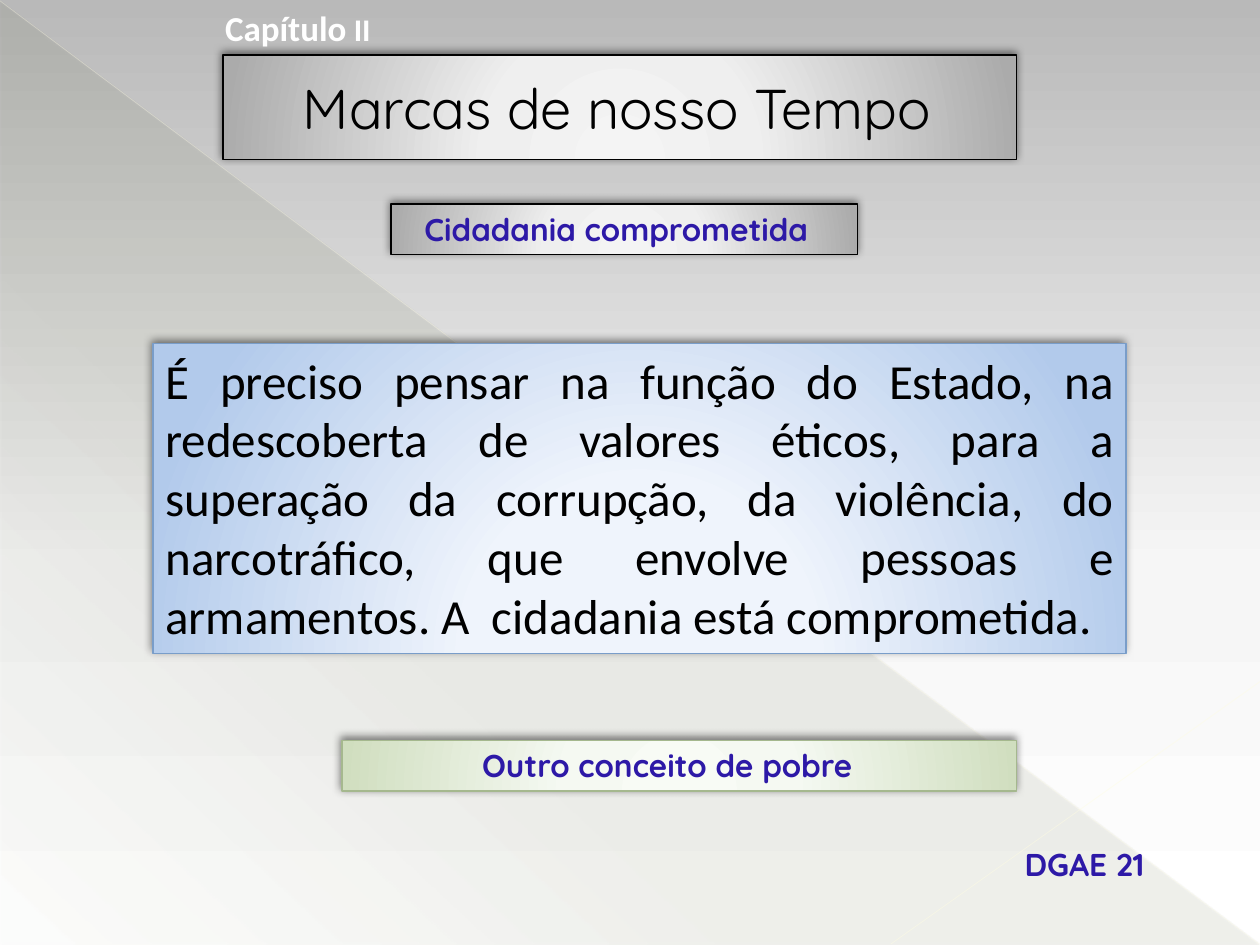
from dataclasses import dataclass

from lxml import etree
from pptx import Presentation
from pptx.dml.color import RGBColor
from pptx.enum.shapes import MSO_CONNECTOR, MSO_SHAPE
from pptx.enum.text import MSO_ANCHOR, MSO_AUTO_SIZE, PP_ALIGN
from pptx.oxml.ns import nsdecls, qn
from pptx.util import Pt

RECT, WEDGE = MSO_SHAPE.RECTANGLE, MSO_SHAPE.RIGHT_TRIANGLE
LEFT, FULL = PP_ALIGN.LEFT, PP_ALIGN.JUSTIFY
TOP, MIDDLE = MSO_ANCHOR.TOP, MSO_ANCHOR.MIDDLE
GROW, FIXED = MSO_AUTO_SIZE.SHAPE_TO_FIT_TEXT, MSO_AUTO_SIZE.NONE
STRAIGHT = MSO_CONNECTOR.STRAIGHT
HALO = ('<a:path path="circle"><a:fillToRect l="50000" t="155000" '
        'r="50000" b="-55000"/></a:path>')


@dataclass
class Theme:
    head: str = "Quicksand"
    body: str = "Calibri"
    title: int = 32
    big: int = 28
    mid: int = 20
    small: int = 18
    ink: str = "000000"
    white: str = "FFFFFF"
    accent: str = "2D19A7"
    wedge: str = "444D26"
    beam: str = "FFFDE3"
    page: tuple = ("B9B9B9", "F6F6F6", "FFFFFF")
    # Panel colours: centre, middle, rim, outline
    grey: tuple = ("F4F4F4", "EFEFEF", "ABABAB", "000000")
    blue: tuple = ("F2F7FE", "EFF4FC", "B2CAEB", "799DC9")
    green: tuple = ("F8FBF5", "F5F9F2", "D0DEBF", "A5B88E")


def linear(angle):
    return f'<a:lin ang="{angle * 60000}" scaled="0"/>'


def blend(parent, stops, mode):
    """Swap the solid fill of parent for a gradient of (place, colour, alpha)."""
    marks = "".join(
        f'<a:gs pos="{pos * 1000}"><a:srgbClr val="{tint}">'
        f'<a:alpha val="{alpha * 1000}"/></a:srgbClr></a:gs>'
        for pos, tint, alpha in stops)
    grad = etree.fromstring(
        f'<a:gradFill {nsdecls("a")} rotWithShape="1">'
        f'<a:gsLst>{marks}</a:gsLst>{mode}</a:gradFill>')
    parent.replace(parent.find(qn("a:solidFill")), grad)


class Page:
    def __init__(self, slide, theme):
        self.slide, self.theme = slide, theme

    def ground(self):
        self.slide.background.fill.solid()
        base = next(self.slide.element.iter(qn("p:bgPr")))
        stops = [(p, c, 100) for p, c in zip((0, 60, 100), self.theme.page)]
        blend(base, stops, linear(90))

    def shape(self, kind, box, stops, mode):
        item = self.slide.shapes.add_shape(kind, *map(Pt, box))
        item.shadow.inherit = False
        item.fill.solid()
        blend(item.element.spPr, stops, mode)
        item.line.fill.background()
        return item

    def panel(self, box, tones):
        *fills, edge = tones
        stops = [(p, c, 100) for p, c in zip((0, 34, 100), fills)]
        item = self.shape(RECT, box, stops, HALO)
        item.line.color.rgb = RGBColor.from_string(edge)
        item.line.width = Pt(0.75)
        glow = item.element.spPr.find(qn("a:effectLst"))
        glow.append(etree.fromstring(
            f'<a:outerShdw {nsdecls("a")} blurRad="{Pt(5)}" dist="{Pt(2)}" '
            f'dir="{245 * 60000}" rotWithShape="0"><a:srgbClr val="{self.theme.ink}">'
            '<a:alpha val="50000"/></a:srgbClr></a:outerShdw>'))
        return item

    def beam(self, start, end, width, alpha):
        item = self.slide.shapes.add_connector(STRAIGHT, *map(Pt, start + end))
        item.line.color.rgb = RGBColor.from_string(self.theme.beam)
        item.line.width = Pt(width)
        tint = next(item.element.spPr.iter(qn("a:srgbClr")))
        etree.SubElement(tint, qn("a:alpha"), val=str(alpha * 1000))
        etree.SubElement(item.element.spPr, qn("a:effectLst"))

    def text(self, item, runs, font, color, bold=False, align=LEFT,
             anchor=TOP, fit=GROW, inset=7.2):
        frame = item.text_frame
        frame.word_wrap, frame.auto_size = True, fit
        frame.vertical_anchor, frame.margin_left = anchor, Pt(inset)
        para = frame.paragraphs[0]
        para.alignment = align
        for words, size in runs:
            run = para.add_run()
            run.text = words
            run.font.name, run.font.size, run.font.bold = font, Pt(size), bold
            run.font.color.rgb = RGBColor.from_string(color)

    def label(self, box, runs, font, color):
        item = self.slide.shapes.add_textbox(*map(Pt, box))
        self.text(item, runs, font, color, bold=True)


def main():
    deck = Presentation()
    deck.slide_width, deck.slide_height = Pt(720), Pt(540)
    look = Theme()
    page = Page(deck.slides.add_slide(deck.slide_layouts[6]), look)

    # Backdrop
    page.ground()
    fade = [(0, look.wedge, 10), (70, look.wedge, 8), (100, look.wedge, 1)]
    page.shape(WEDGE, (0.5, 1, 719.5, 539), fade, linear(133))
    page.beam((0, 0.5), (719.5, 539.5), 0.39, 35)
    page.beam((720, 389.5), (509, 539.5), 0.47, 45)

    # Heading
    title = page.panel((127.5, 31.5, 453.5, 59.5), look.grey)
    page.text(title, [("Marcas de nosso Tempo", look.title)], look.head,
              look.ink, anchor=MIDDLE, fit=FIXED, inset=45.5)
    page.label((121.5, 0, 187, 31.5),
               [("Capítulo", look.mid), (" II", look.small)],
               look.body, look.white)

    # Topic
    page.panel((223.5, 116.5, 266.5, 29), look.grey)
    page.label((235.5, 116.5, 272, 29),
               [("Cidadania comprometida", look.small)], look.head, look.accent)

    # Main text
    body = page.panel((87.5, 196.5, 556, 177), look.blue)
    page.text(body, [(
        "É preciso pensar na função do Estado, na redescoberta de valores "
        "éticos, para a superação da corrupção, da violência, do "
        "narcotráfico, que envolve pessoas e armamentos. A  cidadania está "
        "comprometida.", look.big)], look.body, look.ink, align=FULL)

    # Closing note and reference
    note = page.panel((195.5, 423, 385.5, 29), look.green)
    page.text(note, [("Outro conceito de pobre", look.small)],
              look.head, look.accent, bold=True, inset=80)
    page.label((578.5, 479.5, 141.5, 29), [("DGAE 21", look.small)],
               look.head, look.accent)

    deck.save("out.pptx")


if __name__ == "__main__":
    main()
